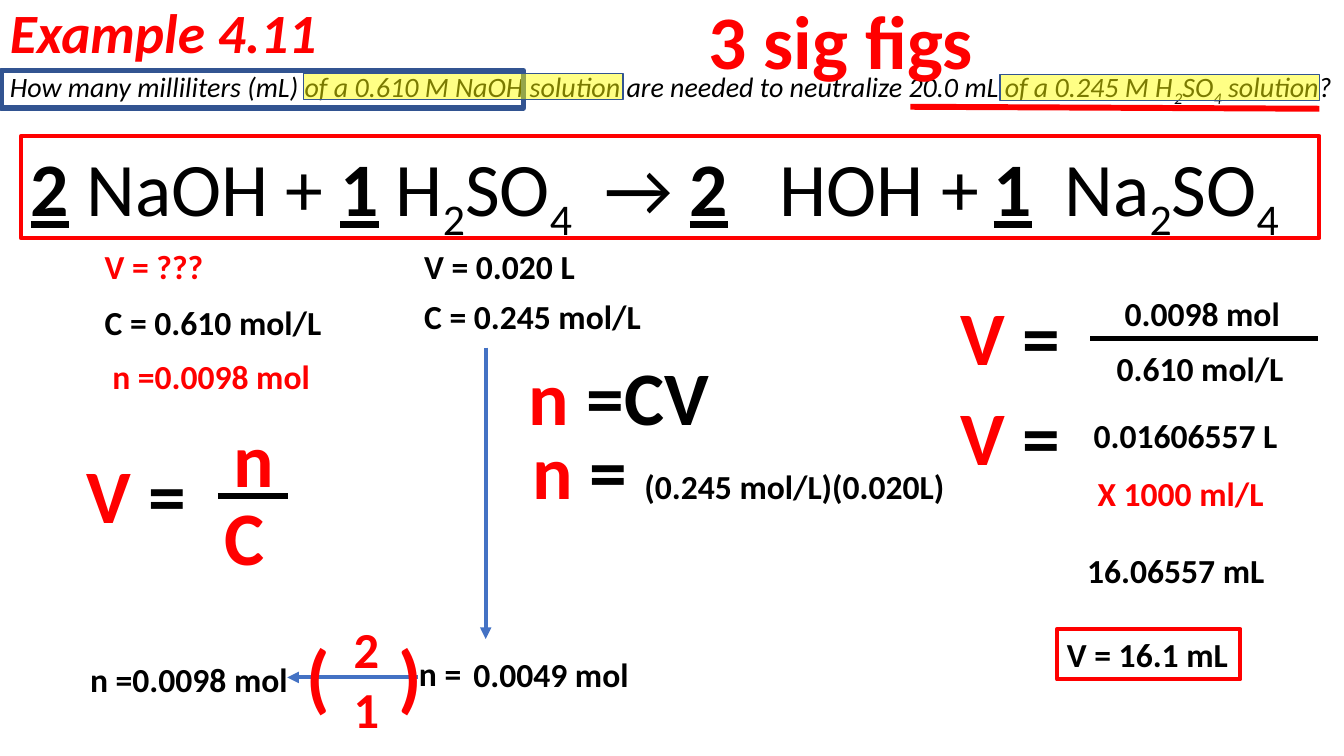
from lxml.etree import SubElement
from pptx import Presentation
from pptx.dml.color import RGBColor
from pptx.enum.shapes import MSO_CONNECTOR, MSO_SHAPE
from pptx.enum.text import MSO_ANCHOR, MSO_AUTO_SIZE, PP_ALIGN
from pptx.oxml.ns import qn
from pptx.util import Cm, Pt

RED, BLACK, BLUE, NAVY, YELLOW = "FF0000", "000000", "4472C4", "325491", "FFFF00"
PLAIN = {}
SUB = {"sub": True}
COUNT = {"bold": True, "underline": True}
DARK = {"color": BLACK}


def rgb(value):
    return RGBColor.from_string(value)


class Worksheet:
    font_name = "Calibri"

    def __init__(self, slide):
        self.slide = slide

    def outline(self, shape, color, width):
        shape.line.color.rgb = rgb(color)
        shape.line.width = Pt(width)

    def text(self, left, top, width, height, lines, size=24, color=BLACK,
             bold=True, italic=False, tabs=(), grow=True):
        box = self.slide.shapes.add_textbox(Cm(left), Cm(top), Cm(width), Cm(height))
        frame = box.text_frame
        frame.word_wrap = True
        frame.auto_size = MSO_AUTO_SIZE.SHAPE_TO_FIT_TEXT if grow else MSO_AUTO_SIZE.NONE
        for index, pieces in enumerate(lines):
            paragraph = frame.add_paragraph() if index else frame.paragraphs[0]
            paragraph.alignment = PP_ALIGN.LEFT
            if tabs:
                stops = SubElement(paragraph._p.get_or_add_pPr(), qn("a:tabLst"))
                for stop in tabs:
                    SubElement(stops, qn("a:tab"), pos=str(int(Cm(stop))), algn="l")
            font = paragraph.font
            font.name, font.size = self.font_name, Pt(size)
            font.bold, font.italic = bold, italic
            font.color.rgb = rgb(color)
            for words, style in [(pieces, PLAIN)] if isinstance(pieces, str) else pieces:
                self.run(paragraph, words, **style)
        return box

    def run(self, paragraph, words, sub=False, bold=None, underline=None, color=None, size=None):
        run = paragraph.add_run()
        run.text = words
        run.font.bold, run.font.underline = bold, underline
        if color:
            run.font.color.rgb = rgb(color)
        if size:
            run.font.size = Pt(size)
        if sub:
            run._r.get_or_add_rPr().set("baseline", "-25000")

    def frame(self, left, top, width, height, line_width, fill=None, opacity=100):
        box = self.slide.shapes.add_shape(
            MSO_SHAPE.RECTANGLE, Cm(left), Cm(top), Cm(width), Cm(height))
        box.shadow.inherit = False
        self.outline(box, NAVY, line_width)
        if fill:
            box.fill.solid()
            box.fill.fore_color.rgb = rgb(fill)
            tint = box.fill._xPr.find(qn("a:solidFill"))[0]
            SubElement(tint, qn("a:alpha"), val=str(opacity * 1000))
        else:
            box.fill.background()

    def line(self, x1, y1, x2, y2, color, width, arrow=False):
        link = self.slide.shapes.add_connector(
            MSO_CONNECTOR.STRAIGHT, Cm(x1), Cm(y1), Cm(x2), Cm(y2))
        self.outline(link, color, width)
        if arrow:
            SubElement(link.line._get_or_add_ln(), qn("a:tailEnd"), type="triangle")
        SubElement(link._element.spPr, qn("a:effectLst"))


def main():
    deck = Presentation()
    deck.slide_width, deck.slide_height = Cm(33.87), Cm(19.05)
    sheet = Worksheet(deck.slides.add_slide(deck.slide_layouts[6]))

    title = sheet.text(0, 0, 29.21, 1.8, ["Example 4.11"], 39.6, RED, italic=True, grow=False)
    title.text_frame.vertical_anchor = MSO_ANCHOR.MIDDLE
    title.text_frame.paragraphs[0].line_spacing = 0.9

    question = [
        ("How many milliliters (mL) of a 0.610 M NaOH solution are needed "
         "to neutralize 20.0 mL of a 0.245 M H", PLAIN),
        ("2", SUB), ("SO", PLAIN), ("4", SUB), (" solution?", PLAIN)]
    sheet.text(0, 1.63, 33.87, 1.11, [question], 20, bold=False, italic=True)
    sheet.frame(0.03, 1.78, 13.16, 0.94, 4)
    for left, top in ((7.65, 1.85), (25.2, 1.88)):
        sheet.frame(left, top, 8.05, 0.66, 1, YELLOW, 48)
    sheet.line(22.94, 2.69, 33.25, 2.74, RED, 4.25)

    equation = [
        ("2", COUNT), (" NaOH + ", PLAIN), ("1", COUNT), (" H", PLAIN), ("2", SUB),
        ("SO", PLAIN), ("4", SUB), ("\t→ ", PLAIN), ("2", COUNT), ("\tHOH +\t", PLAIN),
        ("1", COUNT), ("\tNa", PLAIN), ("2", SUB), ("SO", PLAIN), ("4", SUB)]
    reaction = sheet.text(0.53, 3.43, 32.72, 2.57, [equation], 54, bold=False,
                          tabs=(14.45, 18.87, 24.26, 26.05))
    sheet.outline(reaction, RED, 3)

    for left, top, width, words, color in (
            (2.39, 6.07, 5.26, "V = ???", RED),
            (2.39, 7.49, 6.25, "C = 0.610 mol/L", BLACK),
            (2.58, 8.84, 5.94, "n =0.0098 mol", RED),
            (10.44, 6.07, 5.26, "V = 0.020 L", BLACK),
            (10.44, 7.34, 6.25, "C = 0.245 mol/L", BLACK),
            (10.31, 16.33, 1.93, "n =", BLACK),
            (11.68, 16.36, 4.67, "0.0049 mol", BLACK),
            (2.02, 16.48, 5.94, "n =0.0098 mol", BLACK),
            (28.09, 7.26, 4.62, "0.0098 mol", BLACK),
            (27.89, 8.64, 4.93, "0.610 mol/L", BLACK),
            (27.31, 10.34, 5.41, "0.01606557 L", BLACK),
            (27.41, 11.79, 4.93, "X 1000 ml/L", RED),
            (27.15, 13.72, 5.41, "16.06557 mL", BLACK)):
        sheet.text(left, top, width, 1.27, [words], color=color)

    for left, top in ((1.93, 11.15), (23.95, 7.19), (23.95, 9.7)):
        sheet.text(left, top, 3.28, 2.57, [[("V ", PLAIN), ("=", DARK)]], 54, RED)
    for left, top, width, words in (
            (5.41, 12.22, 2.06, "C"), (5.64, 10.26, 1.6, "n"), (17.6, -0.28, 9.07, "3 sig figs")):
        sheet.text(left, top, width, 2.57, [words], 54, RED)
    sheet.text(13.08, 8.69, 5.97, 2.57, [[("n ", PLAIN), ("=CV", DARK)]], 54, RED)
    moles = [("n ", PLAIN), ("= ", DARK), ("(0.245 mol/L)(0.020L)", {"color": BLACK, "size": 24})]
    sheet.text(13.16, 10.57, 11.68, 2.57, [moles], 54, RED)

    sheet.line(5.49, 12.5, 7.26, 12.5, BLACK, 4)
    sheet.line(27.48, 8.53, 33.22, 8.53, BLACK, 4)
    sheet.line(12.24, 8.76, 12.24, 16.1, BLUE, 2.75, arrow=True)
    sheet.line(10.54, 17.07, 7.24, 17.07, BLUE, 2.75, arrow=True)
    sheet.text(7.47, 15.72, 3.89, 2.57, ["(\t)"], 54, RED, tabs=(2.32,))
    sheet.text(8.66, 15.44, 1.02, 3.33, ["2", "1"], 36, RED)

    answer = sheet.text(26.64, 15.85, 4.62, 1.27, ["V = 16.1 mL"])
    sheet.outline(answer, RED, 3)
    deck.save("out.pptx")


if __name__ == "__main__":
    main()
